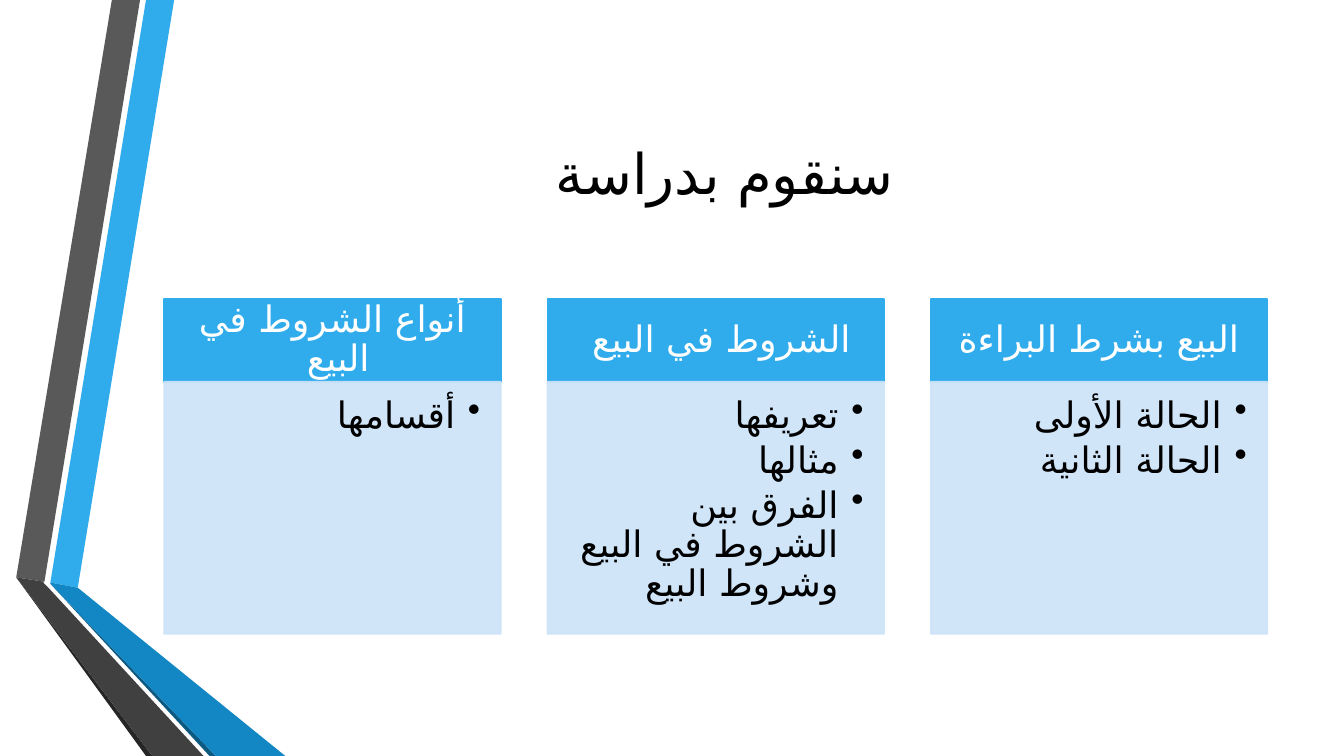
import pptx
import pptx.util
import pptx.dml.color
import pptx.enum.shapes
import pptx.enum.text
import pptx.oxml.ns
from dataclasses import dataclass
from lxml import etree

Cm, Pt = pptx.util.Cm, pptx.util.Pt
ALIGN = pptx.enum.text.PP_ALIGN
ANCHOR = pptx.enum.text.MSO_ANCHOR
qn = pptx.oxml.ns.qn

# Content
TITLE = "سنقوم بدراسة "
COLUMNS = [  # left to right
    ("أنواع الشروط في البيع ", ["أقسامها "]),
    ("الشروط في البيع ", ["تعريفها", "مثالها ", "الفرق بين الشروط في البيع وشروط البيع "]),
    ("البيع بشرط البراءة", ["الحالة الأولى ", "الحالة الثانية "]),
]
RIBBONS = [  # colour, outline in cm
    ("30ACEC", [(1.27, 14.68), (1.96, 14.81), (4.39, 0), (3.68, 0)]),
    ("595959", [(3.53, 0), (2.82, 0), (0.41, 14.55), (1.12, 14.66)]),
    ("262626", [(0.41, 14.55), (3.68, 19.05), (3.84, 19.05)]),
    ("0C5A82", [(1.27, 14.71), (5.28, 19.05), (5.44, 19.05)]),
    ("1287C3", [(1.27, 14.71), (5.44, 19.05), (7.19, 19.05), (1.96, 14.81), (1.27, 14.68)]),
    ("404040", [(5.13, 19.05), (1.22, 14.81), (1.09, 14.68), (1.12, 14.66),
                (0.41, 14.55), (3.84, 19.05)]),
]


@dataclass(frozen=True)
class Theme:
    accent: str = "30ACEC"
    panel: str = "CDE3F8"
    panel_opacity: int = 90
    text: str = "000000"
    header_text: str = "FFFFFF"
    font: str = "Cabin"
    arabic_font: str = "DejaVu Sans"
    title_size: int = 40
    text_size: int = 26
    line_width: float = 1.25


THEME = Theme()

# Column layout in cm
LEFT, TOP, WIDTH, PITCH = 4.14, 7.54, 8.48, 9.66
HEADER_H, PANEL_H = 2.08, 6.35


def rgb(value):
    return pptx.dml.color.RGBColor.from_string(value)


def paint(sp, color, outline=False, opacity=100):
    """Give a shape a flat fill, with or without a matching outline."""
    sp.shadow.inherit = False
    sp.fill.solid()
    sp.fill.fore_color.rgb = rgb(color)
    if outline:
        sp.line.color.rgb = rgb(color)
        sp.line.width = Pt(THEME.line_width)
    else:
        sp.line.fill.background()
    if opacity < 100:
        for clr in sp.element.spPr.iter(qn("a:srgbClr")):
            etree.SubElement(clr, qn("a:alpha"), val=str(opacity * 1000))


def write(tf, lines, size, color, font, align, anchor, spacing=None, after=0, bullets=False):
    """Fill a text frame with right-to-left paragraphs."""
    tf.word_wrap = True
    tf.auto_size = pptx.enum.text.MSO_AUTO_SIZE.NONE
    tf.vertical_anchor = anchor
    for i, line in enumerate(lines):
        p = tf.paragraphs[0] if i == 0 else tf.add_paragraph()
        r = p.add_run()
        r.text = line
        p.alignment = align
        p.line_spacing = spacing
        p.space_after = Pt(after)
        p.font.size = Pt(size)
        p.font.color.rgb = rgb(color)
        p.font.name = font
        pPr = p._p.get_or_add_pPr()
        pPr.set("rtl", "1")
        if bullets:
            pPr.set("marL", str(Cm(0.64)))
            pPr.set("indent", str(-Cm(0.64)))
            bullet = etree.Element(qn("a:buChar"), char="•")
            pPr.find(qn("a:defRPr")).addprevious(bullet)
        # Runs carry the same face, with the Arabic script font beside it
        r.font.size = Pt(size)
        r.font.color.rgb = rgb(color)
        r.font.name = font
        etree.SubElement(r.font._element, qn("a:cs"), typeface=THEME.arabic_font)


def add_box(slide, x, y, height, color, insets, opacity=100):
    sp = slide.shapes.add_shape(pptx.enum.shapes.MSO_SHAPE.RECTANGLE,
                                Cm(x), Cm(y), Cm(WIDTH), Cm(height))
    paint(sp, color, outline=True, opacity=opacity)
    tf = sp.text_frame
    tf.margin_left, tf.margin_top, tf.margin_right, tf.margin_bottom = map(Cm, insets)
    return tf


def main():
    prs = pptx.Presentation()
    prs.slide_width, prs.slide_height = Cm(33.87), Cm(19.05)
    slide = prs.slides.add_slide(prs.slide_layouts[5])

    # Folded ribbons on the left
    for color, outline in RIBBONS:
        points = [(Cm(x), Cm(y)) for x, y in outline]
        builder = slide.shapes.build_freeform(*points[0])
        builder.add_line_segments(points[1:], close=True)
        paint(builder.convert_to_shape(), color)

    # Title
    title = slide.shapes.title
    title.left, title.top, title.width, title.height = Cm(4.11), Cm(1.9), Cm(27.84), Cm(4.88)
    write(title.text_frame, [TITLE], THEME.title_size, THEME.text, THEME.font,
          ALIGN.CENTER, ANCHOR.MIDDLE)

    # Columns: header above a bulleted panel
    for i, (heading, items) in enumerate(COLUMNS):
        x = LEFT + i * PITCH
        tf = add_box(slide, x, TOP, HEADER_H, THEME.accent, (0.5, 0.3, 0.5, 0.3))
        write(tf, [heading], THEME.text_size, THEME.header_text, THEME.arabic_font,
              ALIGN.CENTER, ANCHOR.MIDDLE, spacing=0.9)
        tf = add_box(slide, x, TOP + HEADER_H, PANEL_H, THEME.panel,
                     (0.38, 0.38, 0.5, 0.58), THEME.panel_opacity)
        write(tf, items, THEME.text_size, THEME.text, THEME.font,
              ALIGN.RIGHT, ANCHOR.TOP, spacing=0.9, after=4, bullets=True)

    prs.save("out.pptx")


if __name__ == "__main__":
    main()
